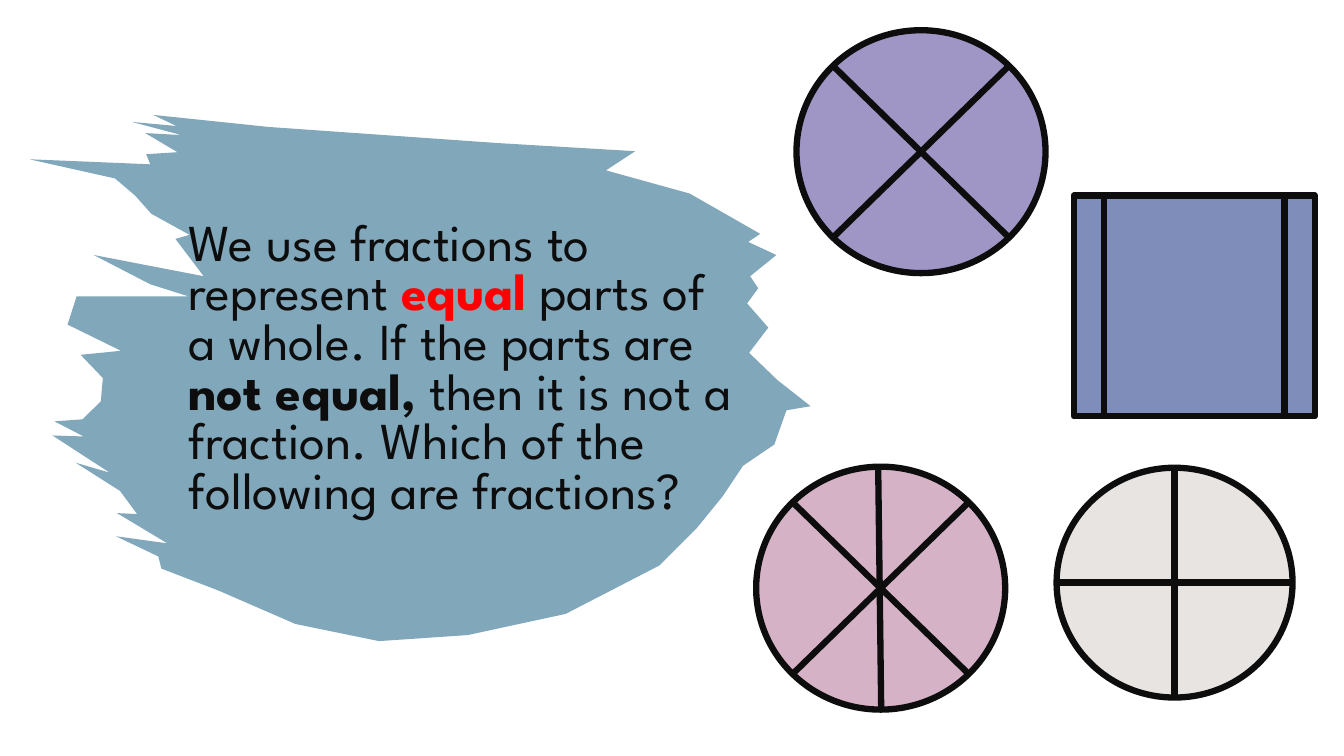
"""Build a slide that asks which of four divided shapes show fractions."""
from lxml.etree import SubElement
from pptx import Presentation
from pptx.dml.color import RGBColor
from pptx.enum.shapes import MSO_CONNECTOR, MSO_SHAPE
from pptx.enum.text import MSO_ANCHOR, MSO_AUTO_SIZE, PP_ALIGN
from pptx.oxml.ns import qn
from pptx.util import Pt

PX = 9144
INK = RGBColor(0x0D, 0x0D, 0x0D)
RED = RGBColor(0xFF, 0x00, 0x00)
BRUSH_BLUE = RGBColor(0x81, 0xA7, 0xBB)
PURPLE = RGBColor(0x9F, 0x96, 0xC6)
PINK = RGBColor(0xD6, 0xB2, 0xC7)
BLUE = RGBColor(0x7F, 0x8D, 0xBA)
GREY = RGBColor(0xE8, 0xE4, 0xE2)
OUTLINE = Pt(4.5)

BRUSH_OUTLINE = [
    (152, 114), (267, 126), (495, 142), (630, 150), (601, 169), (684, 192),
    (754, 232), (742, 240), (770, 253), (744, 274), (752, 286), (741, 301),
    (762, 325), (743, 350), (771, 377), (804, 403), (780, 407), (768, 441),
    (737, 462), (717, 492), (691, 524), (654, 561), (561, 609), (464, 630),
    (376, 636), (293, 619), (217, 586), (160, 564), (157, 552), (115, 532),
    (166, 539), (116, 509), (136, 510), (119, 487), (75, 459), (109, 469),
    (52, 432), (83, 433), (54, 418), (82, 416), (100, 398), (102, 375),
    (80, 352), (120, 348), (67, 322), (76, 294), (187, 294), (149, 282),
    (93, 253), (202, 274), (174, 237), (188, 233), (150, 212), (134, 194),
    (114, 177), (29, 158), (149, 163), (145, 153), (176, 151), (144, 132),
    (180, 134), (131, 121), (175, 125),
]

QUESTION = [
    ("We use fractions to represent ", INK, False),
    ("equal", RED, True),
    (" parts of a whole. If the parts are ", INK, False),
    ("not equal,", INK, True),
    (" then it is not a fraction. Which of the following are fractions?", INK, False),
]

DIVIDED_SHAPES = [
    (MSO_SHAPE.FLOWCHART_SUMMING_JUNCTION, (790, 30, 247, 241), PURPLE),
    (MSO_SHAPE.FLOWCHART_PREDEFINED_PROCESS, (1065, 194, 239, 219), BLUE),
    (MSO_SHAPE.FLOWCHART_OR, (1048, 464, 234, 228), GREY),
    (MSO_SHAPE.FLOWCHART_SUMMING_JUNCTION, (750, 463, 247, 241), PINK),
]


def add_text(paragraph, text, *, color=INK, bold=False, size=37, font="League Spartan"):
    run = paragraph.add_run()
    run.text = text
    run.font.name = font
    run.font.size = Pt(size)
    run.font.bold = bold
    run.font.color.rgb = color


prs = Presentation()
prs.slide_width, prs.slide_height = 1333 * PX, 750 * PX
slide = prs.slides.add_slide(prs.slide_layouts[5])

outline_builder = slide.shapes.build_freeform(*BRUSH_OUTLINE[0], scale=PX)
outline_builder.add_line_segments(BRUSH_OUTLINE[1:], close=True)
brush_stroke = outline_builder.convert_to_shape()
brush_stroke.shadow.inherit = False
brush_stroke.fill.solid()
brush_stroke.fill.fore_color.rgb = BRUSH_BLUE
brush_stroke.line.fill.background()

question = slide.shapes.title
question.left, question.top, question.width, question.height = (
    side * PX for side in (177, 151, 562, 433))
brush_stroke.element.addnext(question.element)
question_frame = question.text_frame
question_frame.word_wrap = True
question_frame.auto_size = MSO_AUTO_SIZE.NONE
question_frame.vertical_anchor = MSO_ANCHOR.MIDDLE
statement = question_frame.paragraphs[0]
statement.alignment = PP_ALIGN.LEFT
statement.line_spacing = 0.8
statement.space_before = Pt(0)
statement.space_after = Pt(6)
for words, color, bold in QUESTION:
    add_text(statement, words, color=color, bold=bold)

for preset, box, color in DIVIDED_SHAPES:
    whole = slide.shapes.add_shape(preset, *(side * PX for side in box))
    whole.shadow.inherit = False
    whole.fill.solid()
    whole.fill.fore_color.rgb = color
    whole.line.color.rgb = INK
    whole.line.width = OUTLINE

pink_divider = slide.shapes.add_connector(
    MSO_CONNECTOR.STRAIGHT, *(end * PX for end in (871, 463, 874, 702)))
pink_divider.line.color.rgb = INK
pink_divider.line.width = OUTLINE
SubElement(pink_divider.element.spPr, qn("a:effectLst"))

prs.save("out.pptx")
